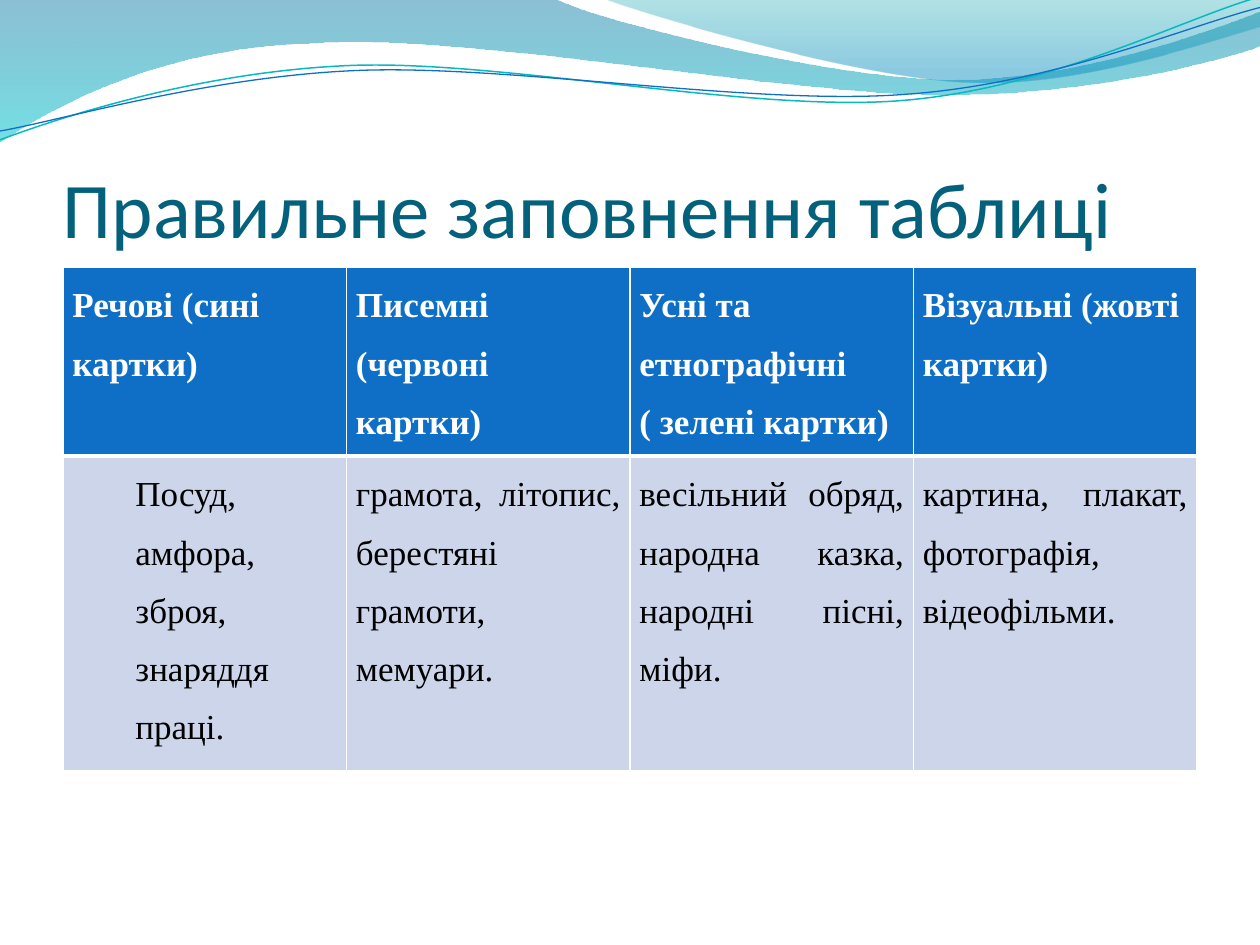
from dataclasses import dataclass
from math import cos, radians, sin
from typing import Optional

from lxml import etree
from pptx import Presentation, util as u
from pptx.dml.color import RGBColor
from pptx.enum import text
from pptx.oxml.ns import qn

WIDTH, HEIGHT = u.Inches(10), u.Inches(7.5)
MARGIN = 0.05  # share of the slide's width
TILT = -2.7  # degrees


@dataclass(frozen=True)
class Stop:
    position: float
    color: str
    opacity: int


@dataclass(frozen=True)
class Wave:
    """Each segment holds one point for a line or three for a cubic curve."""
    start: tuple
    segments: list
    stops: Optional[tuple] = None
    line: Optional[tuple] = None
    pivot: Optional[tuple] = None


@dataclass(frozen=True)
class Column:
    heading: str
    body: str
    indent: float = 0


@dataclass(frozen=True)
class RowStyle:
    fill: str
    color: str
    bold: bool
    align: text.PP_ALIGN
    borders: dict


WAVES = [
    Wave((0, 0), [
        [(4.4, -0.01)],
        [(4.76, 0.17), (6.64, 0.63), (7.58, 0.63)],
        [(8.53, 0.63), (9.58, 0.26), (10, 0.09)],
        [(10.01, 0.36)],
        [(9.83, 0.44), (8.7, 0.76), (7.46, 0.75)],
        [(6.22, 0.75), (3.82, 0.28), (2.57, 0.34)],
        [(1.29, 0.36), (0.46, 0.83), (-0.01, 1.13)],
        [(0, 0)],
    ], stops=(Stop(0, "0074A1", 45), Stop(1, "00C6CF", 55))),
    Wave((4.79, -0.01), [
        [(5.09, 0.11), (6.82, 0.62), (7.69, 0.65)],
        [(8.56, 0.69), (9.61, 0.32), (10, 0.21)],
        [(10, 0)],
        [(4.79, -0.01)],
    ], stops=(Stop(0, "00A1A9", 30), Stop(0.8, "008BBF", 45))),
    Wave((0, 1.11), [
        [(0.48, 0.93), (1.58, 0.57), (2.77, 0.52)],
        [(3.95, 0.47), (5.93, 0.89), (7.13, 0.8)],
        [(8.33, 0.71), (9.38, 0.15), (9.98, -0.02)],
    ], line=("0AB8BF", 0.85), pivot=(4.99, 0.58)),
    Wave((0, 1.04), [
        [(0.47, 0.96), (1.64, 0.61), (2.83, 0.56)],
        [(4.03, 0.51), (5.97, 0.84), (7.17, 0.75)],
        [(8.36, 0.67), (9.41, 0.21), (10, 0.06)],
    ], line=("0F6FC6", 0.75), pivot=(5, 0.59)),
]

COLUMNS = [
    Column("Речові (сині картки)", "Посуд, амфора, зброя, знаряддя праці.", 0.5),
    Column("Писемні (червоні картки)", "грамота, літопис, берестяні грамоти, мемуари."),
    Column("Усні та етнографічні ( зелені картки)",
           "весільний обряд, народна казка, народні пісні, міфи."),
    Column("Візуальні (жовті картки)", "картина, плакат, фотографія, відеофільми."),
]

HEADER = RowStyle("0F6FC6", "FFFFFF", True, text.PP_ALIGN.LEFT,
                  {"L": 1, "R": 1, "T": 1, "B": 3})
BODY = RowStyle("CCD5EA", "000000", False, text.PP_ALIGN.JUSTIFY,
                {"L": 1, "R": 1, "T": 3, "B": 1})


def rgb(color: str) -> RGBColor:
    return RGBColor.from_string(color)


def place(point: tuple, pivot: Optional[tuple]) -> tuple:
    """Return the point in EMU, with the tilt about the pivot taken out."""
    x, y = point
    if pivot:
        angle, dx, dy = radians(-TILT), x - pivot[0], y - pivot[1]
        x = pivot[0] + dx * cos(angle) - dy * sin(angle)
        y = pivot[1] + dx * sin(angle) + dy * cos(angle)
    return u.Inches(x), u.Inches(y)


def bend(shape, segments: list) -> None:
    """Join each three line points of a curved segment into one cubic curve."""
    lines = iter(list(shape.element.iter(qn("a:lnTo"))))
    for segment in segments:
        parts = [next(lines) for _ in segment]
        if len(parts) == 3:
            curve = etree.Element(qn("a:cubicBezTo"))
            parts[0].addprevious(curve)
            for part in parts:
                curve.append(part[0])
                part.getparent().remove(part)


def draw_wave(page, wave: Wave) -> None:
    points = [place(point, wave.pivot) for segment in wave.segments for point in segment]
    builder = page.shapes.build_freeform(*place(wave.start, wave.pivot))
    builder.add_line_segments(points, close=wave.stops is not None)
    shape = builder.convert_to_shape()
    bend(shape, wave.segments)
    shape.shadow.inherit = False
    if wave.pivot:
        shape.rotation = TILT
    if wave.stops:
        shape.line.fill.background()
        shape.fill.gradient()
        shape.fill.gradient_angle = 270
        for target, stop in zip(shape.fill.gradient_stops, wave.stops):
            target.position = stop.position
            target.color.rgb = rgb(stop.color)
        colors = list(shape.element.spPr.iter(qn("a:srgbClr")))
        for element, stop in zip(colors, wave.stops):
            etree.SubElement(element, qn("a:alpha"), val=str(stop.opacity * 1000))
    else:
        color, width = wave.line
        shape.fill.background()
        shape.line.color.rgb = rgb(color)
        shape.line.width = u.Pt(width)


def draw_title(page, wording: str) -> None:
    box = page.shapes.add_textbox(int(WIDTH * MARGIN), u.Inches(0.77),
                                  int(WIDTH * (1 - 2 * MARGIN)), u.Inches(1.25))
    frame = box.text_frame
    frame.word_wrap = True
    frame.vertical_anchor = text.MSO_ANCHOR.BOTTOM
    frame.margin_left = frame.margin_right = frame.margin_bottom = 0
    para = frame.paragraphs[0]
    para.text = wording
    para.font.name, para.font.size = "Calibri", u.Pt(45)
    para.font.color.rgb = rgb("04617B")


def set_borders(cell, widths: dict) -> None:
    properties = cell._tc.get_or_add_tcPr()
    for index, (side, width) in enumerate(widths.items()):
        line = etree.Element(qn(f"a:ln{side}"), w=str(u.Pt(width)))
        fill = etree.SubElement(line, qn("a:solidFill"))
        etree.SubElement(fill, qn("a:srgbClr"), val="FFFFFF")
        properties.insert(index, line)


def fill_cell(cell, wording: str, style: RowStyle, indent: float = 0) -> None:
    cell.margin_left = cell.margin_right = u.Pt(5.4)
    cell.margin_top = cell.margin_bottom = 0
    cell.fill.solid()
    cell.fill.fore_color.rgb = rgb(style.fill)
    set_borders(cell, style.borders)
    para = cell.text_frame.paragraphs[0]
    para.text = wording
    para.alignment = style.align
    para.line_spacing = 1.5
    if indent:
        para._p.get_or_add_pPr().set("marL", str(u.Inches(indent)))
    para.font.name, para.font.size = "Times New Roman", u.Pt(20)
    para.font.bold = style.bold
    para.font.color.rgb = rgb(style.color)


def draw_table(page, columns: list) -> None:
    frame = page.shapes.add_table(2, len(columns), int(WIDTH * MARGIN), u.Inches(2.12),
                                  int(WIDTH * (1 - 2 * MARGIN)), u.Inches(4))
    table = frame.table
    table.horz_banding = False
    for row in table.rows:
        row.height = u.Inches(0.41)  # rows grow with their text
    frame.height = u.Inches(4)
    for index, column in enumerate(columns):
        fill_cell(table.cell(0, index), column.heading, HEADER)
        fill_cell(table.cell(1, index), column.body, BODY, column.indent)


def main() -> None:
    deck = Presentation()
    deck.slide_width, deck.slide_height = WIDTH, HEIGHT
    page = deck.slides.add_slide(deck.slide_layouts[6])
    for wave in WAVES:
        draw_wave(page, wave)
    draw_title(page, "Правильне заповнення таблиці")
    draw_table(page, COLUMNS)
    deck.save("out.pptx")


if __name__ == "__main__":
    main()
